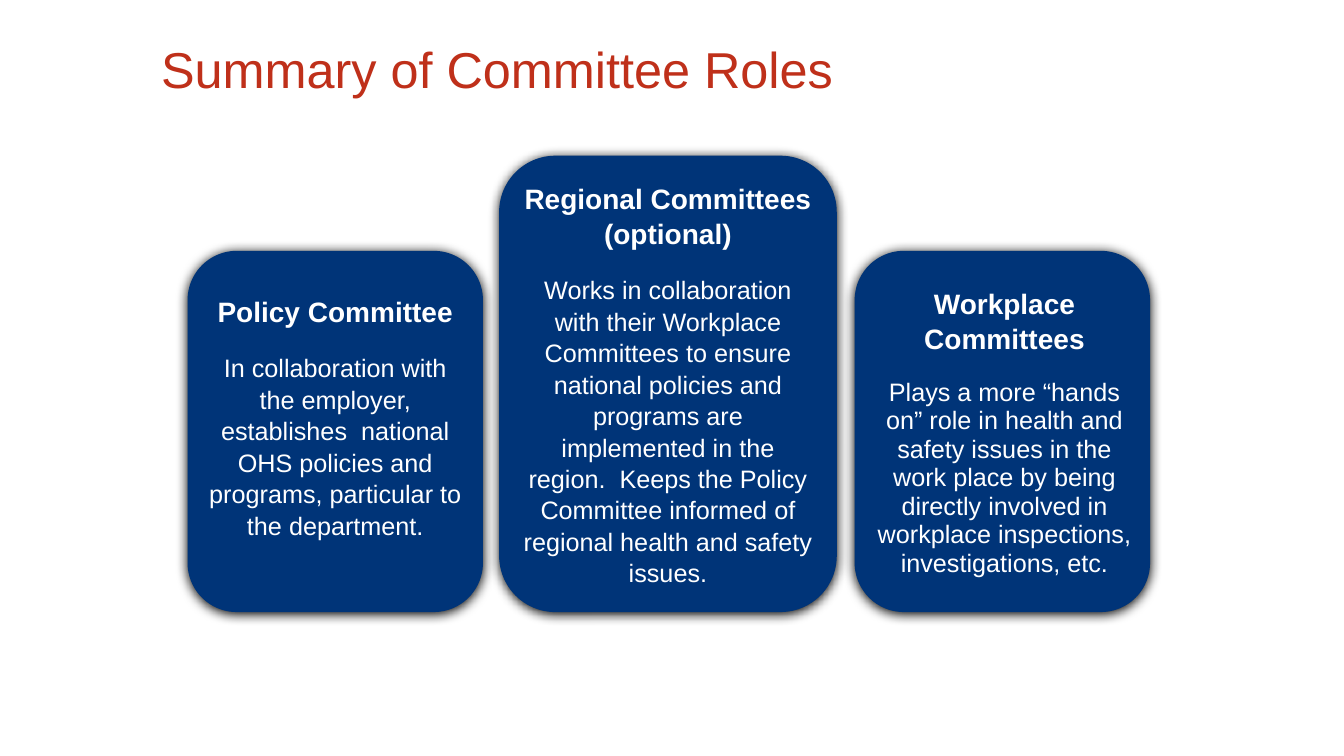
from dataclasses import dataclass

import lxml.etree
import pptx
import pptx.dml.color
import pptx.enum.shapes
import pptx.enum.text
import pptx.oxml
import pptx.oxml.ns
import pptx.util

Pt = pptx.util.Pt
ALIGN = pptx.enum.text.PP_ALIGN
MIDDLE = pptx.enum.text.MSO_ANCHOR.MIDDLE


@dataclass(frozen=True)
class Theme:
    font: str = "Arial"
    title_color: str = "BF301A"
    card_color: str = "003478"
    card_text: str = "FFFFFF"
    shadow_color: str = "000000"
    title_size: float = 36
    heading_size: float = 20
    body_size: float = 18


class CommitteeSlide:
    """Draws the elements of the committee slide in one theme."""

    def __init__(self, slide, theme):
        self.slide = slide
        self.theme = theme

    def format_frame(self, frame, margins):
        values = dict(zip(("margin_left", "margin_top", "margin_right", "margin_bottom"), map(Pt, margins)))
        values.update(word_wrap=True, vertical_anchor=MIDDLE)
        for name, value in values.items():
            setattr(frame, name, value)

    def fill_paragraph(self, paragraph, text, size, color, bold=False, **layout):
        paragraph.text = text
        for name, value in layout.items():
            setattr(paragraph, name, value)
        for name, value in {"name": self.theme.font, "size": Pt(size), "bold": bold}.items():
            setattr(paragraph.runs[0].font, name, value)
        paragraph.runs[0].font.color.rgb = pptx.dml.color.RGBColor.from_string(color)

    def title(self, text, left, top, width, height):
        shape = self.slide.shapes.add_textbox(*map(Pt, (left, top, width, height)))
        self.format_frame(shape.text_frame, (7.2, 3.6, 7.2, 3.6))
        self.fill_paragraph(shape.text_frame.paragraphs[0], text, self.theme.title_size,
                            self.theme.title_color, line_spacing=0.9)

    def shadow(self, shape):
        shape.shadow.inherit = False
        effects = shape._element.spPr.find(pptx.oxml.ns.qn("a:effectLst"))
        outer = lxml.etree.SubElement(effects, pptx.oxml.ns.qn("a:outerShdw"), blurRad=str(Pt(8.5)),
                                      dist=str(Pt(1)), dir="5400000", algn="ctr", rotWithShape="0")
        lxml.etree.SubElement(outer, pptx.oxml.ns.qn("a:srgbClr"), val=self.theme.shadow_color)

    def card(self, box, margins, heading, body, body_spacing):
        theme = self.theme
        shape = self.slide.shapes.add_shape(
            pptx.enum.shapes.MSO_SHAPE.ROUNDED_RECTANGLE, *map(Pt, box))
        shape.fill.solid()
        shape.fill.fore_color.rgb = pptx.dml.color.RGBColor.from_string(theme.card_color)
        shape.line.fill.background()
        self.shadow(shape)
        frame = shape.text_frame
        self.format_frame(frame, margins)
        self.fill_paragraph(frame.paragraphs[0], heading, theme.heading_size, theme.card_text,
                            bold=True, alignment=ALIGN.CENTER, line_spacing=1.04)
        self.fill_paragraph(frame.add_paragraph(), body, theme.body_size, theme.card_text,
                            alignment=ALIGN.CENTER, line_spacing=body_spacing, space_before=Pt(17))


def main():
    presentation = pptx.Presentation()
    presentation.slide_width, presentation.slide_height = Pt(960), Pt(540)
    slide = presentation.slides.add_slide(presentation.slide_layouts[6])
    committee_slide = CommitteeSlide(slide, Theme())
    committee_slide.title("Summary of Committee Roles", 108, 25.2, 648, 52.5)

    bottom = 437.2
    side_size, middle_size = (211, 258), (241.2, 326)
    cards = [
        (134, side_size, (3, 3.6, 3, 25), "Policy Committee",
         "In collaboration with the employer, establishes  national OHS policies and programs, "
         "particular to the department.", 1.04),
        (356.5, middle_size, (3, 3.6, 3, 3.6), "Regional Committees (optional)",
         "Works in collaboration with their Workplace Committees to ensure national policies and "
         "programs are implemented in the region.  Keeps the Policy Committee informed of regional "
         "health and safety issues.", 1.04),
        (610.5, side_size, (6, 3.6, 3, 3.6), "Workplace Committees",
         "Plays a more “hands on” role in health and safety issues in the work place by being "
         "directly involved in workplace inspections, investigations, etc.", 0.94),
    ]
    for left, (width, height), margins, heading, body, body_spacing in cards:
        box = (left, bottom - height, width, height)
        committee_slide.card(box, margins, heading, body, body_spacing)
    presentation.save("out.pptx")


if __name__ == "__main__":
    main()
